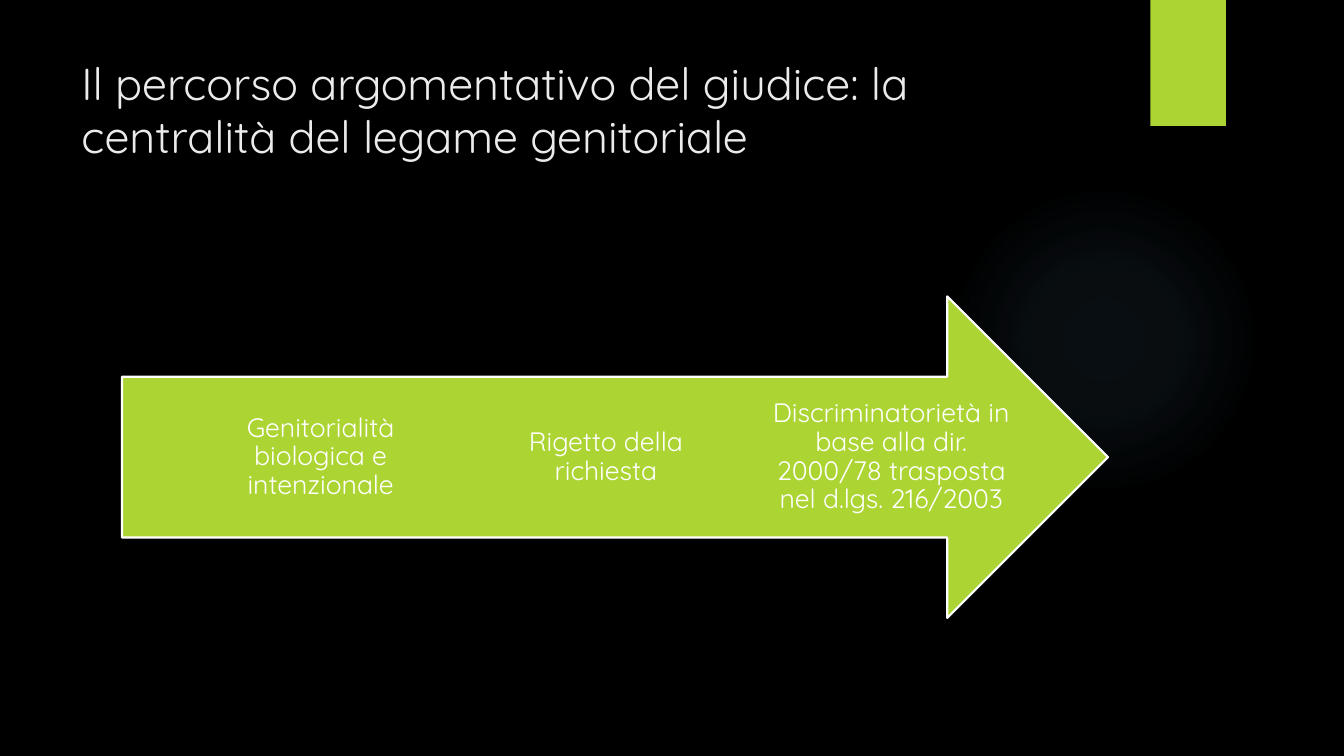
from lxml import etree
from pptx import Presentation, util as u
from pptx.dml.color import RGBColor
from pptx.enum import shapes, text
from pptx.oxml import ns

TITLE = "Il percorso argomentativo del giudice: la centralità del legame genitoriale"
STEPS = [
    "Genitorialità biologica e intenzionale",
    "Rigetto della richiesta",
    "Discriminatorietà in base alla dir. 2000/78 trasposta nel d.lgs. 216/2003",
]
FONT = "Quicksand"
HEX = {"back": "000000", "lime": "ACD433", "glow": "7AC4F0",
       "title": "EBEBEB", "white": "FFFFFF"}
GLOW = [(0, 7), (36, 6), (69, 0)]  # stop and opacity, percent
ARROW = (1.21, 2.94, 9.78, 3.19)
FIRST, STEP, WIDE = 2.0, 2.83, 2.36  # step columns: left, pitch, width


def rgb(name):
    return RGBColor.from_string(HEX[name])


def add_form(slide, kind, box, fill):
    form = slide.shapes.add_shape(kind, *map(u.Inches, box))
    form.shadow.inherit = False
    form.fill.solid()
    form.fill.fore_color.rgb = rgb(fill)
    form.line.fill.background()
    return form


def add_glow(slide, box):
    """Add a disc whose tint fades from its centre to nothing."""
    disc = add_form(slide, shapes.MSO_SHAPE.OVAL, box, "glow")
    stops = "".join(
        f'<a:gs pos="{pos * 1000}"><a:srgbClr val="{HEX["glow"]}">'
        f'<a:alpha val="{alpha * 1000}"/></a:srgbClr></a:gs>'
        for pos, alpha in GLOW)
    grad = etree.fromstring(
        f'<a:gradFill {ns.nsdecls("a")}><a:gsLst>{stops}</a:gsLst>'
        '<a:path path="circle"><a:fillToRect l="50000" t="50000" '
        'r="50000" b="50000"/></a:path></a:gradFill>')
    props = disc.element.spPr
    props.replace(props.find(ns.qn("a:solidFill")), grad)


def add_text(slide, words, box, size, color):
    frame = slide.shapes.add_textbox(*map(u.Inches, box)).text_frame
    frame.word_wrap = True
    para = frame.paragraphs[0]
    para.text = words
    para.font.name = FONT
    para.font.size = u.Pt(size)
    para.font.color.rgb = rgb(color)
    return frame, para


def add_step(slide, words, box):
    frame, para = add_text(slide, words, box, 19, "white")
    frame.vertical_anchor = text.MSO_ANCHOR.MIDDLE
    frame.margin_left = frame.margin_right = 0
    frame.margin_top = frame.margin_bottom = u.Inches(0.21)
    para.alignment = text.PP_ALIGN.CENTER
    para.line_spacing = 0.9


def main():
    deck = Presentation()
    deck.slide_width, deck.slide_height = u.Inches(13.33), u.Inches(7.5)
    slide = deck.slides.add_slide(deck.slide_layouts[6])
    slide.background.fill.solid()
    slide.background.fill.fore_color.rgb = rgb("back")

    add_glow(slide, (9.41, 1.83, 3.08, 3.08))
    add_form(slide, shapes.MSO_SHAPE.RECTANGLE, (11.41, 0, 0.75, 1.25), "lime")
    add_text(slide, TITLE, (0.71, 0.5, 10.29, 1.53), 32, "title")

    arrow = add_form(slide, shapes.MSO_SHAPE.RIGHT_ARROW, ARROW, "lime")
    arrow.line.color.rgb = rgb("white")
    arrow.line.width = u.Pt(1.5)
    top, high = ARROW[1] + ARROW[3] / 4, ARROW[3] / 2
    for col, words in enumerate(STEPS):
        add_step(slide, words, (FIRST + col * STEP, top, WIDE, high))

    deck.save("out.pptx")


if __name__ == "__main__":
    main()
